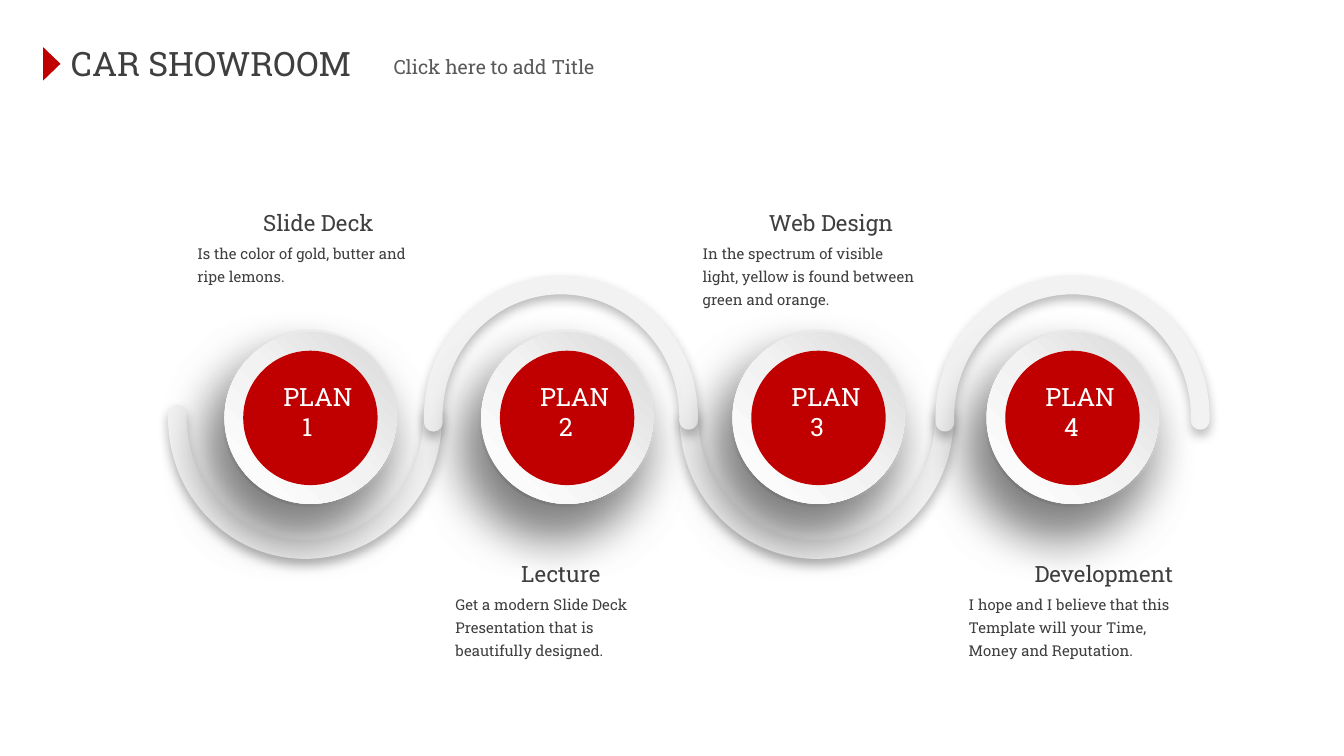
from dataclasses import dataclass

from pptx import Presentation
from pptx.dml.color import RGBColor
from pptx.enum.shapes import MSO_SHAPE as Shape
from pptx.oxml import parse_xml
from pptx.oxml.ns import nsdecls
from pptx.util import Inches, Pt

COLORS = {
    "accent": "C00000",
    "text": "3F3F3F",
    "subtitle": "595959",
    "white": "FFFFFF",
    "light": "F2F2F2",
    "gray": "D8D8D8",
    "shadow": "000000",
}
RIM_STOPS = [(0, "light"), (55, "light"), (100, "gray")]
DISC_STOPS = [(0, "white"), (51, "light"), (100, "gray")]
ARC_SHADOW = (28, 6, 3, 90)
BUTTON_SHADOW = (49, 26, 17, 115)


@dataclass
class Plan:
    heading: str
    body: str
    body_lines: int
    heading_width: float
    button_left: float
    text_left: float
    text_top: float


PLANS = [
    Plan("Slide Deck", "Is the color of gold, butter and ripe lemons.",
         2, 1.19, 1.65, 1.37, 1.46),
    Plan("Lecture", "Get a modern Slide Deck Presentation that is beautifully designed.",
         3, 1.1, 3.56, 3.29, 4.07),
    Plan("Web Design",
         "In the spectrum of visible light, yellow is found between green and orange.",
         3, 1.34, 5.43, 5.13, 1.46),
    Plan("Development",
         "I hope and I believe that this Template will your Time, Money and Reputation.",
         3, 1.32, 7.32, 7.11, 4.07),
]


def rgb(name):
    return RGBColor.from_string(COLORS[name])


@dataclass
class SlideBuilder:
    slide: object
    font: str = "Roboto Slab"

    def shape(self, kind, left, top, width, height, color=None):
        shape = self.slide.shapes.add_shape(
            kind, Inches(left), Inches(top), Inches(width), Inches(height))
        shape.shadow.inherit = False
        shape.line.fill.background()
        if color:
            shape.fill.solid()
            shape.fill.fore_color.rgb = rgb(color)
        else:
            shape.fill.background()
        return shape

    def shadow(self, shape, opacity, blur, distance, angle):
        """Cast an outer shadow: opacity in percent, lengths in points, angle clockwise."""
        effects = shape.element.spPr.find(".//{*}effectLst")
        effects.append(parse_xml(
            f'<a:outerShdw {nsdecls("a")} blurRad="{Pt(blur)}" dist="{Pt(distance)}" '
            f'dir="{angle * 60000}" algn="ctr" rotWithShape="0">'
            f'<a:srgbClr val="{COLORS["shadow"]}"><a:alpha val="{opacity * 1000}"/></a:srgbClr>'
            '</a:outerShdw>'))

    def gradient(self, shape, stops, angle):
        """Fill with (percent, colour) stops; the angle runs counter-clockwise."""
        shape.fill.gradient()
        shape.fill.gradient_angle = angle
        stop_list = shape.element.spPr.find(".//{*}gsLst")
        for stop in list(stop_list):
            stop_list.remove(stop)
        for position, color in stops:
            stop_list.append(parse_xml(
                f'<a:gs {nsdecls("a")} pos="{position * 1000}">'
                f'<a:srgbClr val="{COLORS[color]}"/></a:gs>'))

    def arc(self, left, top, rotation):
        arc = self.shape(Shape.ARC, left, top, 1.9, 1.96)
        arc.adjustments[0], arc.adjustments[1] = 214.5, 109
        arc.rotation = rotation
        arc.line.color.rgb = rgb("light")
        arc.line.width = Pt(10)
        arc.line._ln.set("cap", "rnd")
        self.shadow(arc, *ARC_SHADOW)

    def text(self, content, left, top, width, height, size, color="text",
             spacing=None, inset=0.05, indents=(0,)):
        """Add a text box; indents gives the left margin of each paragraph."""
        box = self.slide.shapes.add_textbox(
            Inches(left), Inches(top), Inches(width), Inches(height))
        frame = box.text_frame
        frame.word_wrap = True
        frame.margin_left = frame.margin_right = Inches(0.1)
        frame.margin_top = frame.margin_bottom = Inches(inset)
        frame.text = content
        for para, indent in zip(frame.paragraphs, indents):
            para.line_spacing = spacing
            para._p.get_or_add_pPr().set("marL", str(Inches(indent)))
            for span in para.runs:
                span.font.name = self.font
                span.font.size = Pt(size)
                span.font.color.rgb = rgb(color)

    def button(self, number, left, top=2.45):
        rim = self.shape(Shape.DONUT, left, top, 1.32, 1.32)
        rim.adjustments[0] = 0.05
        self.gradient(rim, RIM_STOPS, 225)
        disc = self.shape(Shape.OVAL, left + 0.02, top + 0.02, 1.28, 1.28)
        self.gradient(disc, DISC_STOPS, 45)
        for part in (rim, disc):
            self.shadow(part, *BUTTON_SHADOW)
        self.shape(Shape.OVAL, left + 0.16, top + 0.16, 1, 1, "accent")
        self.text(f"PLAN\n{number}", left + 0.36, top + 0.34, 0.75, 0.56,
                  13.5, "white", indents=(0, 0.14))

    def caption(self, plan):
        self.text(plan.body, plan.text_left, plan.text_top + 0.27,
                  1.8, 0.03 + 0.2 * plan.body_lines, 8, spacing=1.3)
        self.text(plan.heading, plan.text_left + 0.49, plan.text_top,
                  plan.heading_width, 0.27, 12, spacing=1.5, inset=0)

    def header(self, title, subtitle):
        self.text(title, 0.43, 0.27, 2.3, 0.4, 18)
        marker = self.shape(Shape.ISOSCELES_TRIANGLE, 0.26, 0.41, 0.25, 0.13, "accent")
        marker.rotation = 90
        self.text(subtitle, 2.76, 0.36, 1.83, 0.28, 10.5, "subtitle", indents=(0.07,))


def main():
    deck = Presentation()
    deck.slide_width, deck.slide_height = Inches(10), Inches(10 * 9 / 16)
    page = SlideBuilder(deck.slides.add_slide(deck.slide_layouts[6]))

    # The lower arcs lie behind the upper ones.
    for position in (0, 2, 1, 3):
        upper = position % 2
        page.arc(1.32 + 5.71 * position / 3, 2.12 if upper else 2.13, 180 * upper)
    for plan in PLANS:
        page.caption(plan)
    for number, plan in enumerate(PLANS, start=1):
        page.button(number, plan.button_left)
    page.header("CAR SHOWROOM", "Click here to add Title")

    deck.save("out.pptx")


if __name__ == "__main__":
    main()
